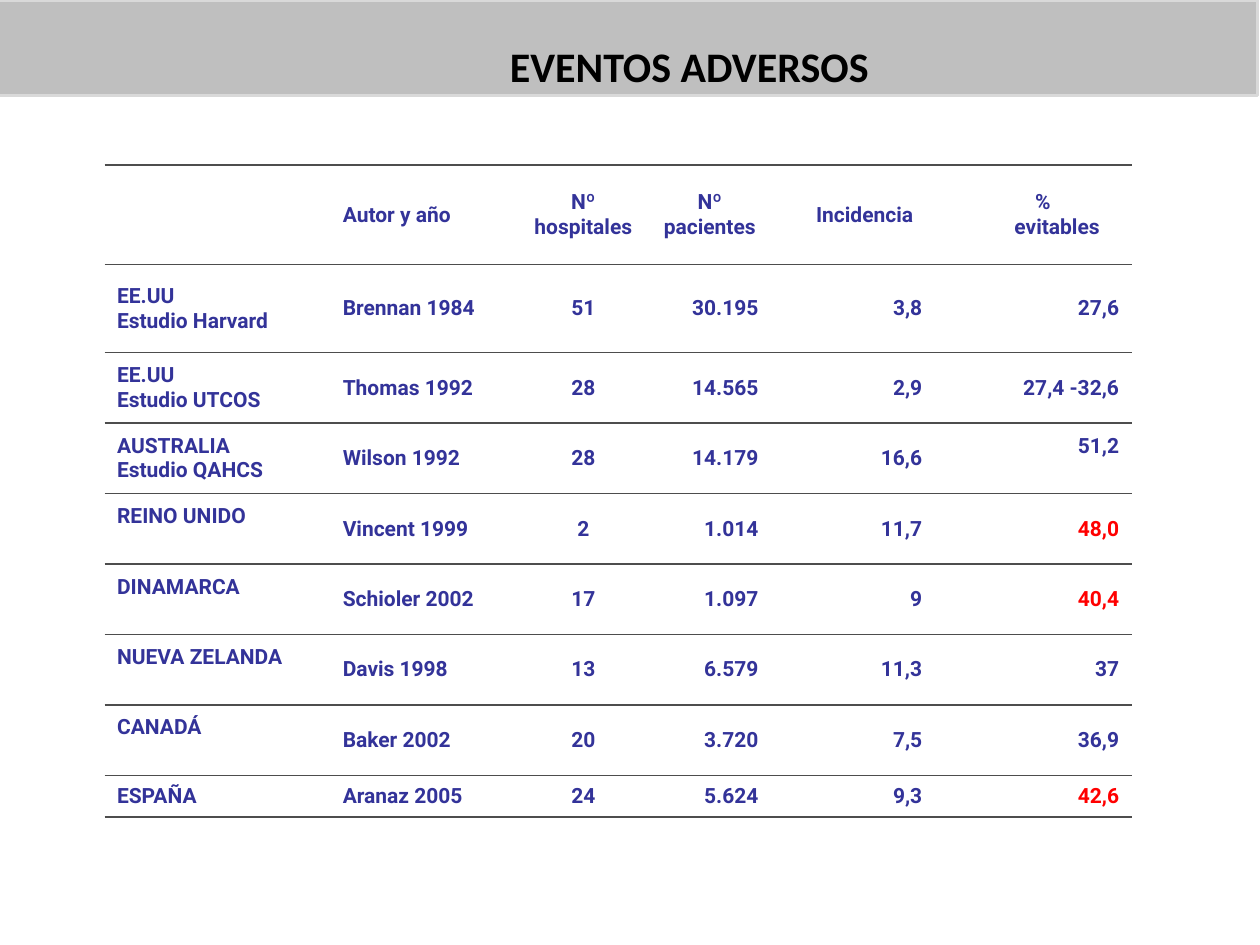
"""Build the slide that compares studies of adverse events in hospitals."""
from lxml import etree
from pptx import Presentation
from pptx.dml.color import RGBColor
from pptx.enum.shapes import MSO_SHAPE as Shape
from pptx.enum.text import MSO_ANCHOR as Anchor, PP_ALIGN as Align
from pptx.oxml import parse_xml
from pptx.oxml.ns import nsdecls, qn
from pptx.util import Cm, Pt


def color(value):
    return RGBColor.from_string(value)


def apply(target, formats):
    for name, value in formats.items():
        setattr(target, name, value)


BLUE, RED, RULE = "333399", "FF0000", "4D4D4D"
NO_GRID = "{2D5ABB26-0587-4C30-8999-92F81FD0307C}"
LINE_HEIGHT = Cm(0.5)

headings = ["", "Autor y año", "Nº hospitales", "Nº\npacientes", "Incidencia", "%\nevitables"]
studies = [
    ["EE.UU\nEstudio Harvard", "Brennan 1984", "51", "30.195", "3,8", "27,6"],
    ["EE.UU\nEstudio UTCOS", "Thomas 1992", "28", "14.565", "2,9", "27,4 -32,6"],
    ["AUSTRALIA\nEstudio QAHCS", "Wilson 1992", "28", "14.179", "16,6", "51,2"],
    ["REINO UNIDO", "Vincent 1999", "2", "1.014", "11,7", "48,0"],
    ["DINAMARCA", "Schioler 2002", "17", "1.097", "9", "40,4"],
    ["NUEVA ZELANDA", "Davis 1998", "13", "6.579", "11,3", "37"],
    ["CANADÁ", "Baker 2002", "20", "3.720", "7,5", "36,9"],
    ["ESPAÑA", "Aranaz 2005", "24", "5.624", "9,3", "42,6"],
]
column_widths = [4.55, 3.78, 2.64, 2.46, 3.3, 3.97]
row_heights = [2, 1.78] + [1.42] * 6 + [0.84]
heading_aligns = [Align.LEFT] * 2 + [Align.CENTER] * 4
study_aligns = [Align.LEFT] * 2 + [Align.CENTER] + [Align.RIGHT] * 3
heading_indents = {"Incidencia": 0.48, "%": 0.4, "evitables": 0.97}
raised = {"51,2", "REINO UNIDO", "DINAMARCA", "NUEVA ZELANDA", "CANADÁ"}
highlighted = {"48,0", "40,4", "42,6"}

deck = Presentation()
apply(deck, {"slide_width": Cm(25.4), "slide_height": Cm(19.05)})
slide = deck.slides.add_slide(deck.slide_layouts[6])

banner = slide.shapes.add_shape(Shape.RECTANGLE, Cm(-0.05), Cm(0), Cm(25.4), Cm(1.93))
banner.shadow.inherit = False
banner.fill.solid()
banner.fill.fore_color.rgb = color("BFBFBF")
banner.line.color.rgb = color("D9D9D9")
banner.line.width = Pt(2)

comparison = slide.shapes.add_table(
    len(row_heights), len(column_widths), Cm(2.11), Cm(3.33),
    Cm(sum(column_widths)), Cm(sum(row_heights))).table
apply(comparison, {"first_row": False, "horz_banding": False})
comparison._tbl.tblPr.find(qn("a:tableStyleId")).text = NO_GRID
for column, width in zip(comparison.columns, column_widths):
    column.width = Cm(width)
for row, height in zip(comparison.rows, row_heights):
    row.height = Cm(height)

for row_index, entries in enumerate([headings] + studies):
    aligns = study_aligns if row_index else heading_aligns
    for column_index, entry in enumerate(entries):
        cell = comparison.cell(row_index, column_index)
        cell.text = entry
        apply(cell, {
            "vertical_anchor": Anchor.MIDDLE,
            "margin_left": Cm(0.25), "margin_right": Cm(0.25),
            "margin_top": Cm(0.13),
            "margin_bottom": Cm(0.13) + (LINE_HEIGHT if entry in raised else 0),
        })
        cell.fill.solid()
        cell.fill.fore_color.rgb = color("FFFFFF")
        for position, side in enumerate(["lnT", "lnB"]):
            border = parse_xml(f'<a:{side} {nsdecls("a")} w="{Pt(1)}"/>')
            ink = etree.SubElement(border, qn("a:solidFill"))
            etree.SubElement(ink, qn("a:srgbClr"), val=RULE)
            cell._tc.tcPr.insert(position, border)
        for paragraph in cell.text_frame.paragraphs:
            paragraph.alignment = aligns[column_index]
            if paragraph.text in heading_indents:
                indent = Cm(heading_indents[paragraph.text])
                paragraph._p.get_or_add_pPr().set("marL", str(indent))
            apply(paragraph.font, {"name": "Roboto", "size": Pt(12), "bold": True})
            paragraph.font.color.rgb = color(RED if entry in highlighted else BLUE)

title = slide.shapes.add_textbox(Cm(10.03), Cm(0.69), Cm(7.82), Cm(1.27)).text_frame
title.word_wrap = False
title.text = "EVENTOS ADVERSOS"
title_font = title.paragraphs[0].font
apply(title_font, {"name": "Calibri", "size": Pt(24), "bold": True})
title_font.color.rgb = color("000000")

deck.save("out.pptx")
